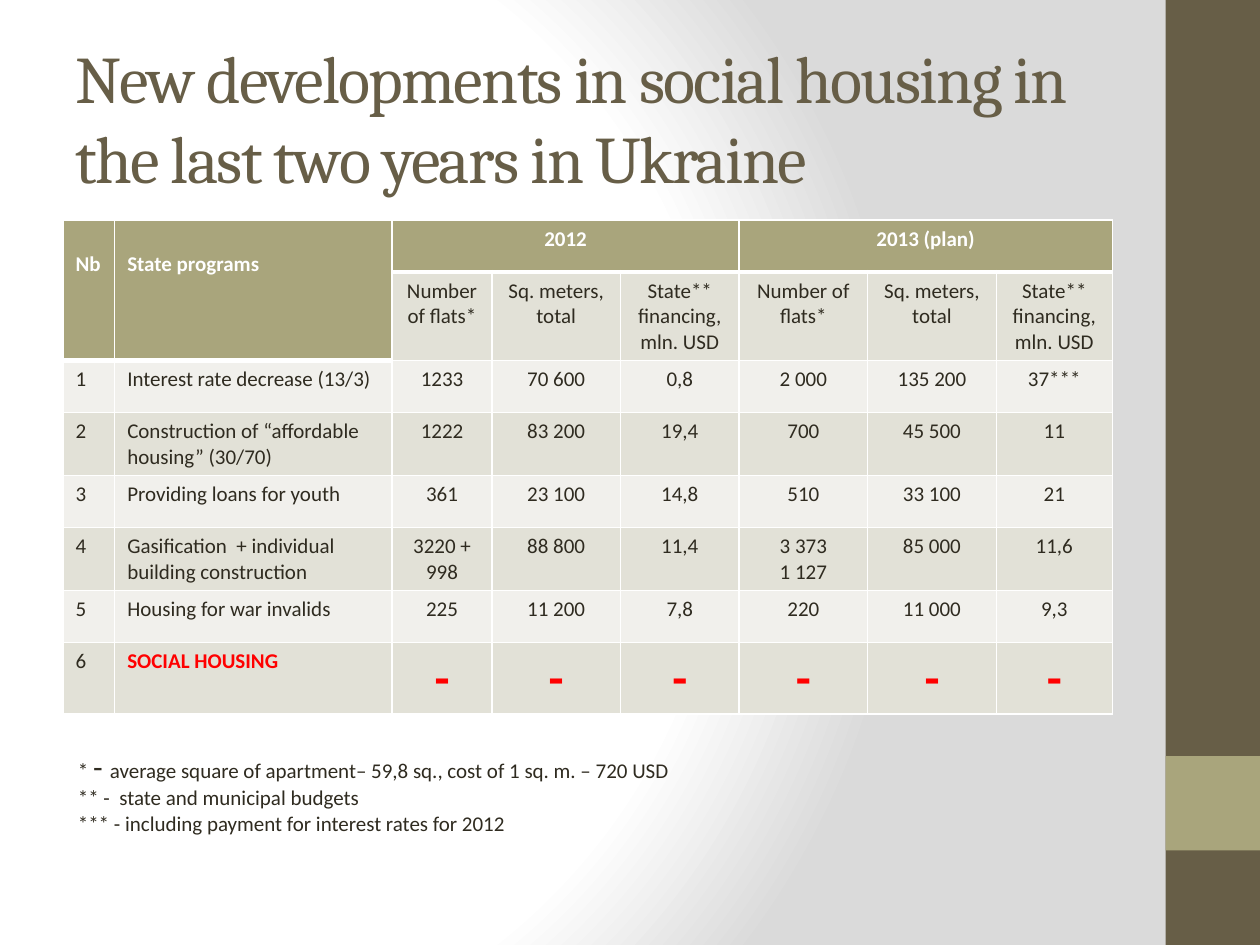
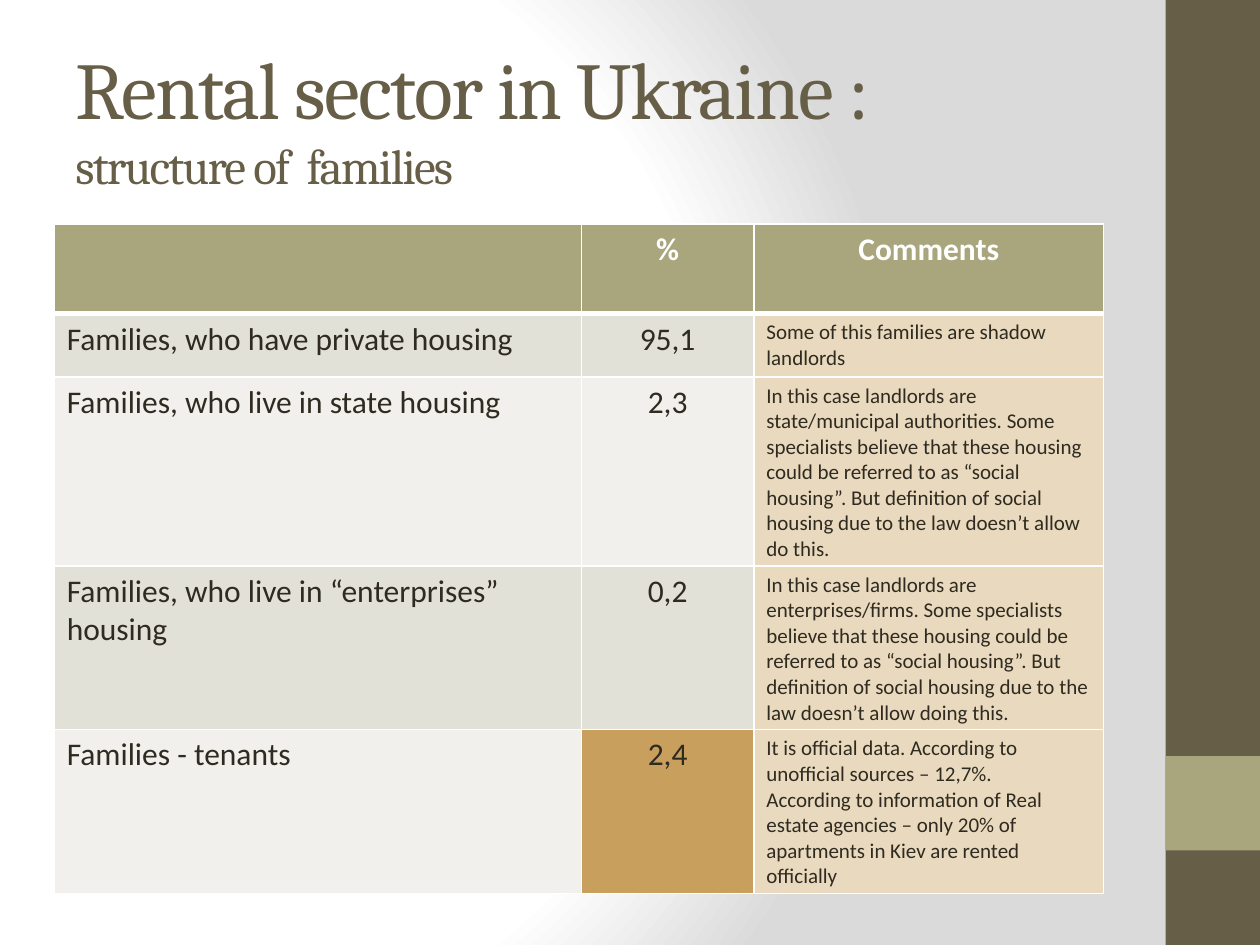
from pptx import Presentation
from pptx.dml.color import RGBColor
from pptx.enum.shapes import MSO_SHAPE
from pptx.enum.text import MSO_ANCHOR, PP_ALIGN
from pptx.oxml import parse_xml
from pptx.oxml.ns import nsdecls
from pptx.util import Inches, Pt

RECTANGLE = MSO_SHAPE.RECTANGLE
MIDDLE = MSO_ANCHOR.MIDDLE
LEFT, CENTER = PP_ALIGN.LEFT, PP_ALIGN.CENTER

BROWN = RGBColor(0x67, 0x5E, 0x47)
OLIVE = RGBColor(0xA9, 0xA5, 0x7C)
INK = RGBColor(0x2F, 0x2B, 0x20)
WHITE = RGBColor(0xFF, 0xFF, 0xFF)
RED = RGBColor(0xFF, 0x00, 0x00)
DARK_ROW = RGBColor(0xE2, 0xE1, 0xD7)
LIGHT_ROW = RGBColor(0xF1, 0xF0, 0xEC)
SAND = RGBColor(0xE9, 0xD9, 0xBE)
GOLD = RGBColor(0xC8, 0x9F, 0x5D)
HEADING_FONT, BODY_FONT = "Cambria", "Calibri"

prs = Presentation()
prs.slide_width, prs.slide_height = Inches(10), Inches(7.5)
W, H = prs.slide_width, prs.slide_height
MARGIN = int(W * 0.05)
CONTENT_WIDTH = int(W * 0.833)
ROW_HEIGHT = int(H * 0.055)

# Shared background: white glow on the left fading to grey
master = prs.slide_master
master.background.fill.gradient()
glow = master.element.xpath("./p:cSld/p:bg/p:bgPr/a:gradFill")[0]
stops = "".join(
    f'<a:gs pos="{share * 1000}"><a:srgbClr val="{color}"/></a:gs>'
    for share, color in ((0, "FFFFFF"), (75, "FFFFFF"), (100, "DADADA")))
glow.getparent().replace(glow, parse_xml(
    f'<a:gradFill {nsdecls("a")} rotWithShape="1"><a:gsLst>{stops}</a:gsLst>'
    '<a:path path="circle">'
    '<a:fillToRect l="20000" t="50000" r="100000" b="50000"/>'
    '</a:path></a:gradFill>'))

# Shared side band and title
TITLES = [
    [("New developments in social housing in the last two years in Ukraine", 38)],
    [("Rental sector in Ukraine :", 46), ("structure of  families", 28)],
]
slides = []
for title_lines in TITLES:
    slide = prs.slides.add_slide(prs.slide_layouts[6])
    slides.append(slide)
    for top, height, color in ((0, 1, BROWN), (0.8, 0.1, OLIVE)):
        band = slide.shapes.add_shape(RECTANGLE, int(W * 0.925), int(H * top),
                                      int(W * 0.075), int(H * height))
        band.shadow.inherit = False
        band.fill.solid()
        band.fill.fore_color.rgb = color
        band.line.fill.background()

    title = slide.shapes.add_textbox(MARGIN, int(H * 0.04), CONTENT_WIDTH,
                                     int(H / 6)).text_frame
    title.word_wrap = True
    title.vertical_anchor = MIDDLE
    heading = title.paragraphs[0]
    heading.font.name = HEADING_FONT
    heading.font.color.rgb = BROWN
    for number, (line, size) in enumerate(title_lines):
        if number:
            heading.add_line_break()
        run = heading.add_run()
        run.text = line
        run.font.size = Pt(size)
        run.font._element.set("spc", "-100")


def add_grid(slide, left, top, weights, row_heights):
    """Add a plain table whose columns share the content width by weight."""
    table = slide.shapes.add_table(len(row_heights), len(weights), left, top,
                                   CONTENT_WIDTH, sum(row_heights)).table
    table.first_row = table.horz_banding = False
    for column, weight in zip(table.columns, weights):
        column.width = int(CONTENT_WIDTH * weight / sum(weights))
    for row, height in zip(table.rows, row_heights):
        row.height = height
    return table


def fill_cell(cell, text, fill, size, align=LEFT, color=INK, bold=False):
    """Write a cell with white rules; header cells get a thick lower rule."""
    header = fill == OLIVE
    properties = cell._tc.get_or_add_tcPr()
    for side, points in (("L", 1), ("R", 1), ("T", 1 if header else 0),
                         ("B", 3 if header else 1)):
        if points:
            properties.append(parse_xml(
                f'<a:ln{side} {nsdecls("a")} w="{Pt(points)}"><a:solidFill>'
                f'<a:srgbClr val="{WHITE}"/></a:solidFill></a:ln{side}>'))
    cell.fill.solid()
    cell.fill.fore_color.rgb = fill
    cell.text = text
    for paragraph in cell.text_frame.paragraphs:
        paragraph.alignment = align
        paragraph.font.name = BODY_FONT
        paragraph.font.size = Pt(size)
        paragraph.font.bold = header or bold
        paragraph.font.color.rgb = WHITE if header else color


# Slide 1: state housing programs
MEASURES = ["Number of flats*", "Sq. meters,\ntotal", "State** financing, mln. USD"]
PROGRAMS = [
    ["Nb", "State programs", "2012", "", "", "2013 (plan)", "", ""],
    ["", ""] + MEASURES * 2,
    ["1", "Interest rate decrease (13/3)",
     "1233", "70 600", "0,8", "2 000", "135 200", "37***"],
    ["2", "Construction of “affordable housing” (30/70)",
     "1222", "83 200", "19,4", "700", "45 500", "11"],
    ["3", "Providing loans for youth",
     "361", "23 100", "14,8", "510", "33 100", "21"],
    ["4", "Gasification  + individual building construction",
     "3220 + 998", "88 800", "11,4", "3 373\n1 127", "85 000", "11,6"],
    ["5", "Housing for war invalids",
     "225", "11 200", "7,8", "220", "11 000", "9,3"],
    ["6", "SOCIAL HOUSING"] + ["-"] * 6,
]
programs = add_grid(slides[0], MARGIN, int(H * 0.233),
                    [0.41, 2.2, 0.79, 1.02, 0.94, 1.02, 1.02, 0.92],
                    [ROW_HEIGHT] * len(PROGRAMS))
for r, row in enumerate(PROGRAMS):
    for c, text in enumerate(row):
        is_header = r == 0 or (r == 1 and c < 2)
        is_social = r == len(PROGRAMS) - 1 and c > 0
        fill_cell(programs.cell(r, c), text,
                  OLIVE if is_header else DARK_ROW if r % 2 else LIGHT_ROW,
                  28 if is_social and c > 1 else 12,
                  CENTER if c > 1 else LEFT,
                  RED if is_social else INK, is_social)
for c in (0, 1):
    programs.cell(0, c).merge(programs.cell(1, c))
    programs.cell(0, c).margin_top = Inches(0.25)
for c in (2, 5):
    programs.cell(0, c).merge(programs.cell(0, c + 2))

# Slide 1: footnotes
FOOTNOTES = [
    [("* ", 12), ("- ", 18),
     ("average square of apartment– 59,8 sq., cost of 1 sq. m. – 720 USD", 12)],
    [("** -  state and municipal budgets", 12)],
    [("*** - including payment for interest rates for 2012", 12)],
]
footnotes = slides[0].shapes.add_textbox(int(W * 0.052), int(H * 0.784),
                                         CONTENT_WIDTH, int(H * 0.108)).text_frame
footnotes.word_wrap = True
for number, pieces in enumerate(FOOTNOTES):
    note = footnotes.add_paragraph() if number else footnotes.paragraphs[0]
    note.font.name = BODY_FONT
    note.font.color.rgb = INK
    for text, size in pieces:
        run = note.add_run()
        run.text = text
        run.font.size = Pt(size)

# Slide 2: families by type of housing
FAMILIES = [
    ["", "%", "Comments"],
    ["Families, who have private housing", "95,1",
     "Some of this families are shadow landlords"],
    ["Families, who live in state housing", "2,3",
     "In this case landlords are state/municipal authorities. Some specialists "
     "believe that these housing could be referred to as “social housing”. But "
     "definition of social housing due to the law doesn’t allow do this."],
    ["Families, who live in “enterprises” housing", "0,2",
     "In this case landlords are enterprises/firms. Some specialists believe that "
     "these housing could be referred to as “social housing”. But definition of "
     "social housing due to the law doesn’t allow doing this."],
    ["Families - tenants", "2,4",
     "It is official data. According to unofficial sources – 12,7%.\n"
     "According to information of Real estate agencies – only 20% of apartments "
     "in Kiev are rented officially"],
]
families = add_grid(slides[1], int(W * 0.043), int(H * 0.237), [4.19, 1.37, 2.78],
                    [int(H * 0.095)] + [ROW_HEIGHT] * (len(FAMILIES) - 1))
for r, row in enumerate(FAMILIES):
    for c, text in enumerate(row):
        is_comment = r > 0 and c == 2
        if r == 0:
            fill = OLIVE
        elif is_comment:
            fill = SAND
        elif text == "2,4":
            fill = GOLD
        else:
            fill = DARK_ROW if r % 2 else LIGHT_ROW
        fill_cell(families.cell(r, c), text, fill, 12 if is_comment else 18,
                  LEFT if c == 0 or is_comment else CENTER)

prs.save("out.pptx")
